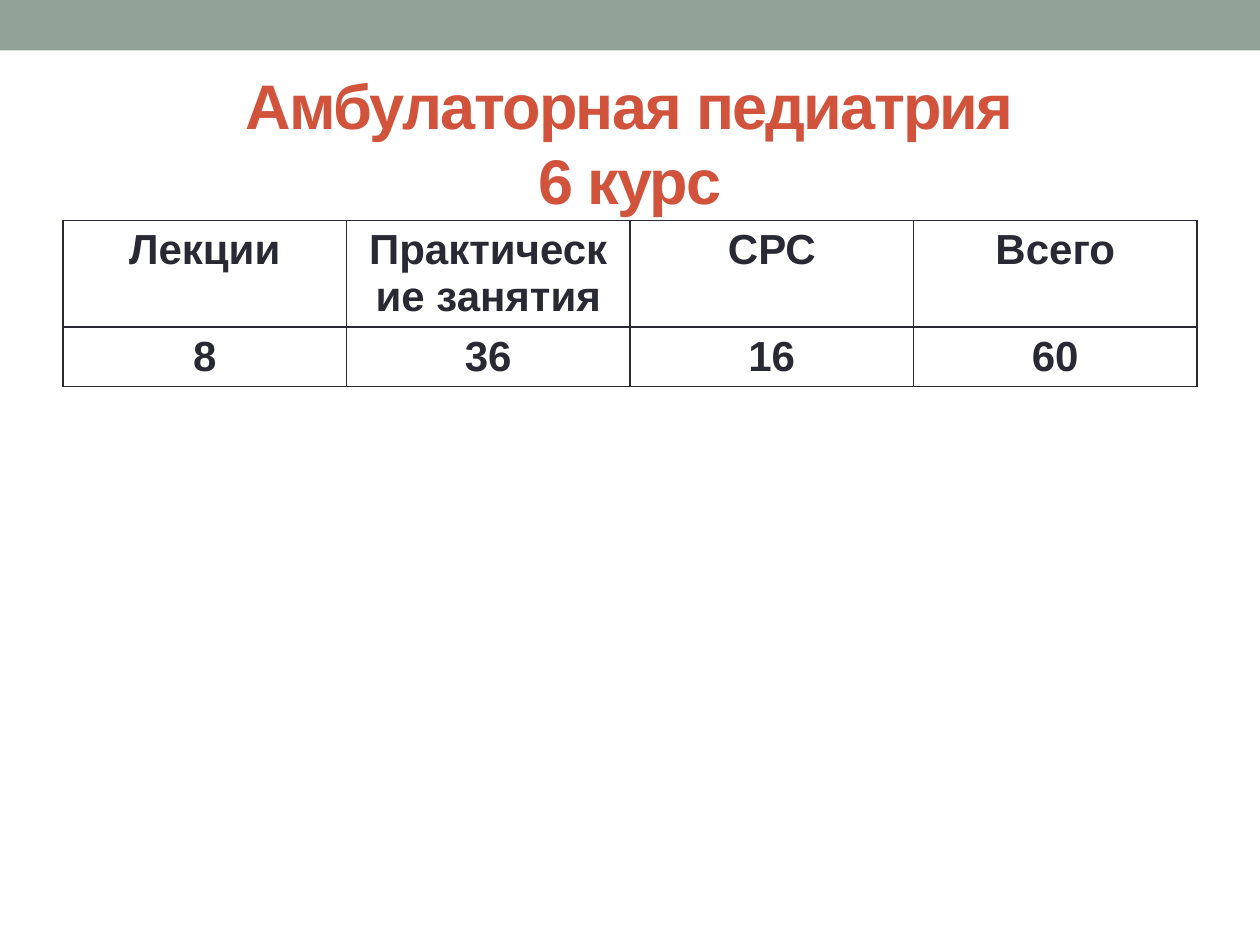
from lxml.etree import SubElement
from pptx import Presentation
from pptx.dml.color import RGBColor
from pptx.enum.shapes import MSO_SHAPE as Shape
from pptx.enum.text import MSO_ANCHOR as Anchor, PP_ALIGN as Align
from pptx.oxml.ns import qn
from pptx.util import Pt

COLORS = {"band": "93A299", "title": "D2533C", "ink": "292934"}
HOURS = [
    ["Лекции", "Практические занятия", "СРС", "Всего"],
    ["8", "36", "16", "60"],
]
ROW_HEIGHTS = [61, 34]


def color(name):
    return RGBColor.from_string(COLORS[name])


def write(frame, text, size, ink, bold=True, align=Align.CENTER, spacing=None):
    """Fill the frame with one paragraph; a vertical tab breaks the line."""
    paragraph = frame.paragraphs[0]
    paragraph.text = text
    paragraph.alignment = align
    for run in paragraph.runs:
        font = run.font
        font.name, font.size, font.bold = "Arial", Pt(size), bold
        font.color.rgb = color(ink)
        if spacing is not None:
            run._r.get_or_add_rPr().set("spc", str(round(spacing * 100)))


def add_band(slide, left, top, width, height):
    band = slide.shapes.add_shape(
        Shape.RECTANGLE, Pt(left), Pt(top), Pt(width), Pt(height))
    band.shadow.inherit = False
    band.fill.solid()
    band.fill.fore_color.rgb = color("band")
    band.line.fill.background()


def place_title(slide, left, top, width, height):
    title = slide.shapes.title
    title.left, title.top = Pt(left), Pt(top)
    title.width, title.height = Pt(width), Pt(height)
    title.text_frame.vertical_anchor = Anchor.MIDDLE
    write(title.text_frame, "Амбулаторная педиатрия\v6 курс", 36, "title",
          spacing=-1)


def outline(cell, ink, width):
    properties = cell._tc.get_or_add_tcPr()
    for position, side in enumerate(("a:lnL", "a:lnR", "a:lnT", "a:lnB")):
        border = SubElement(properties, qn(side), w=str(Pt(width)))
        fill = SubElement(border, qn("a:solidFill"))
        SubElement(fill, qn("a:srgbClr"), val=COLORS[ink])
        properties.insert(position, border)


def add_hours_table(slide, left, top, width):
    table = slide.shapes.add_table(
        len(HOURS), len(HOURS[0]), Pt(left), Pt(top), Pt(width),
        Pt(sum(ROW_HEIGHTS))).table
    table.first_row = table.horz_banding = False
    for row, height in zip(table.rows, ROW_HEIGHTS):
        row.height = Pt(height)
    for r, values in enumerate(HOURS):
        for c, value in enumerate(values):
            cell = table.cell(r, c)
            cell.fill.background()
            outline(cell, "ink", 1)
            write(cell.text_frame, value, 24, "ink")


def main():
    deck = Presentation()
    deck.slide_width, deck.slide_height = Pt(720), Pt(540)
    slide = deck.slides.add_slide(deck.slide_layouts[5])
    add_band(slide, 0, 0, 720, 28.8)
    place_title(slide, 36, 42, 648, 78)
    add_hours_table(slide, 36, 126, 648)
    deck.save("out.pptx")


if __name__ == "__main__":
    main()
